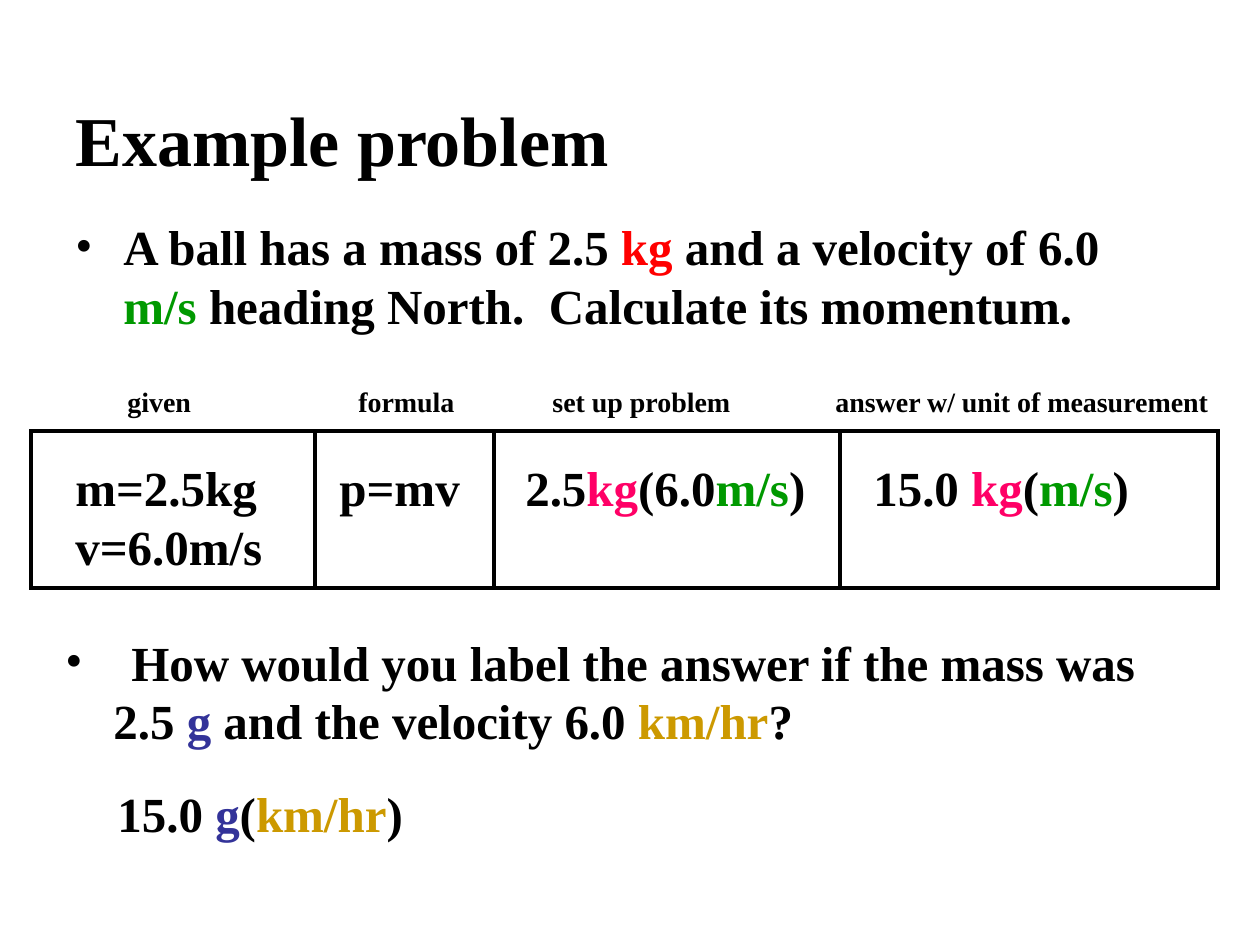
import pptx
import pptx.util
import pptx.dml.color
import pptx.enum.shapes
import pptx.enum.text
import pptx.oxml.ns
from lxml import etree

RGB = pptx.dml.color.RGBColor
BLACK = RGB(0x00, 0x00, 0x00)
RED = RGB(0xFF, 0x00, 0x00)
GREEN = RGB(0x00, 0x99, 0x00)
PINK = RGB(0xFF, 0x00, 0x66)
BLUE = RGB(0x33, 0x33, 0x99)
GOLD = RGB(0xCC, 0x99, 0x00)
FONT = "Times New Roman"
qn = pptx.oxml.ns.qn


def px(count):
    return pptx.util.Emu(round(count * 914400 / 126))


def fill_paragraph(paragraph, runs, size=28, margin=0, indent=0, bullet=False):
    paragraph.alignment = pptx.enum.text.PP_ALIGN.LEFT
    paragraph.font.name = FONT
    paragraph.font.size = pptx.util.Pt(size)
    paragraph.font.bold = True
    for text, color in runs:
        run = paragraph.add_run()
        run.text = text
        run.font.name = FONT
        run.font.size = pptx.util.Pt(size)
        run.font.bold = True
        run.font.color.rgb = color
    properties = paragraph._p.get_or_add_pPr()
    properties.set("marL", str(px(margin)))
    properties.set("indent", str(px(indent)))
    if bullet:
        properties.insert(0, etree.Element(qn("a:buFont"), typeface=FONT))
        properties.insert(1, etree.Element(qn("a:buChar"), char="•"))


presentation = pptx.Presentation()
presentation.slide_width = px(1260)
presentation.slide_height = px(945)
slide = presentation.slides.add_slide(presentation.slide_layouts[5])

title = slide.shapes.title
title.left, title.top, title.width, title.height = px(63), px(105), px(1134), px(67)
title.text_frame.vertical_anchor = pptx.enum.text.MSO_ANCHOR.MIDDLE
title.text_frame.auto_size = pptx.enum.text.MSO_AUTO_SIZE.NONE
fill_paragraph(title.text_frame.paragraphs[0], [("Example problem", BLACK)], size=40)

FRAME_LEFT, FRAME_TOP, FRAME_WIDTH, FRAME_HEIGHT = 31, 431, 1187, 157
work_frame = slide.shapes.add_shape(
    pptx.enum.shapes.MSO_SHAPE.RECTANGLE,
    px(FRAME_LEFT), px(FRAME_TOP), px(FRAME_WIDTH), px(FRAME_HEIGHT))
work_frame.shadow.inherit = False
work_frame.fill.background()
work_frame.line.color.rgb = BLACK
work_frame.line.width = pptx.util.Pt(2.25)
etree.SubElement(work_frame._element.spPr.find(qn("a:ln")), qn("a:miter"), lim="800000")

for divider_x in (315, 494, 840):
    divider = slide.shapes.add_connector(
        pptx.enum.shapes.MSO_CONNECTOR.STRAIGHT,
        px(divider_x), px(FRAME_TOP), px(divider_x), px(FRAME_TOP + FRAME_HEIGHT))
    divider.line.color.rgb = BLACK
    divider.line.width = pptx.util.Pt(2.25)
    etree.SubElement(divider._element.spPr, qn("a:effectLst"))

problem = [("A ball has a mass of 2.5 ", BLACK), ("kg", RED),
           (" and a velocity of 6.0 ", BLACK), ("m/s ", GREEN),
           ("heading North.  Calculate its momentum.", BLACK)]
question_start = [("How would you label the answer if the mass was", BLACK)]
question_end = [("2.5 ", BLACK), ("g", BLUE), (" and the velocity 6.0 ", BLACK),
                ("km/hr", GOLD), ("?", BLACK)]
setup = [("2.5", BLACK), ("kg", PINK), ("(6.0", BLACK), ("m/s", GREEN), (")", BLACK)]
answer = [("15.0 ", BLACK), ("kg", PINK), ("(", BLACK), ("m/s", GREEN), (")", BLACK)]
new_answer = [("15.0 ", BLACK), ("g", BLUE), ("(", BLACK), ("km/hr", GOLD), (")", BLACK)]

text_blocks = [
    (63, 210, 1113, 147, [(problem, dict(margin=48, indent=-48, bullet=True))]),
    (63, 451, 240, 130, [([("m=2.5kg", BLACK)], {}), ([("v=6.0m/s", BLACK)], {})]),
    (327, 451, 160, 72, [([("p=mv", BLACK)], {})]),
    (513, 451, 315, 72, [(setup, {})]),
    (861, 451, 290, 72, [(answer, {})]),
    (53, 626, 1110, 130, [(question_start, dict(margin=66, indent=-66, bullet=True)),
                          (question_end, dict(margin=48))]),
    (105, 777, 320, 72, [(new_answer, {})]),
]
for left, width, heading in (
        (115, 110, "given"), (346, 140, "formula"),
        (540, 220, "set up problem"), (823, 415, "answer w/ unit of measurement")):
    text_blocks.append((left, 378, width, 47, [([(heading, BLACK)], dict(size=16))]))

for left, top, width, height, paragraphs in text_blocks:
    text_frame = slide.shapes.add_textbox(px(left), px(top), px(width), px(height)).text_frame
    text_frame.word_wrap = True
    for number, (runs, layout) in enumerate(paragraphs):
        paragraph = text_frame.add_paragraph() if number else text_frame.paragraphs[0]
        fill_paragraph(paragraph, runs, **layout)

presentation.save("out.pptx")
